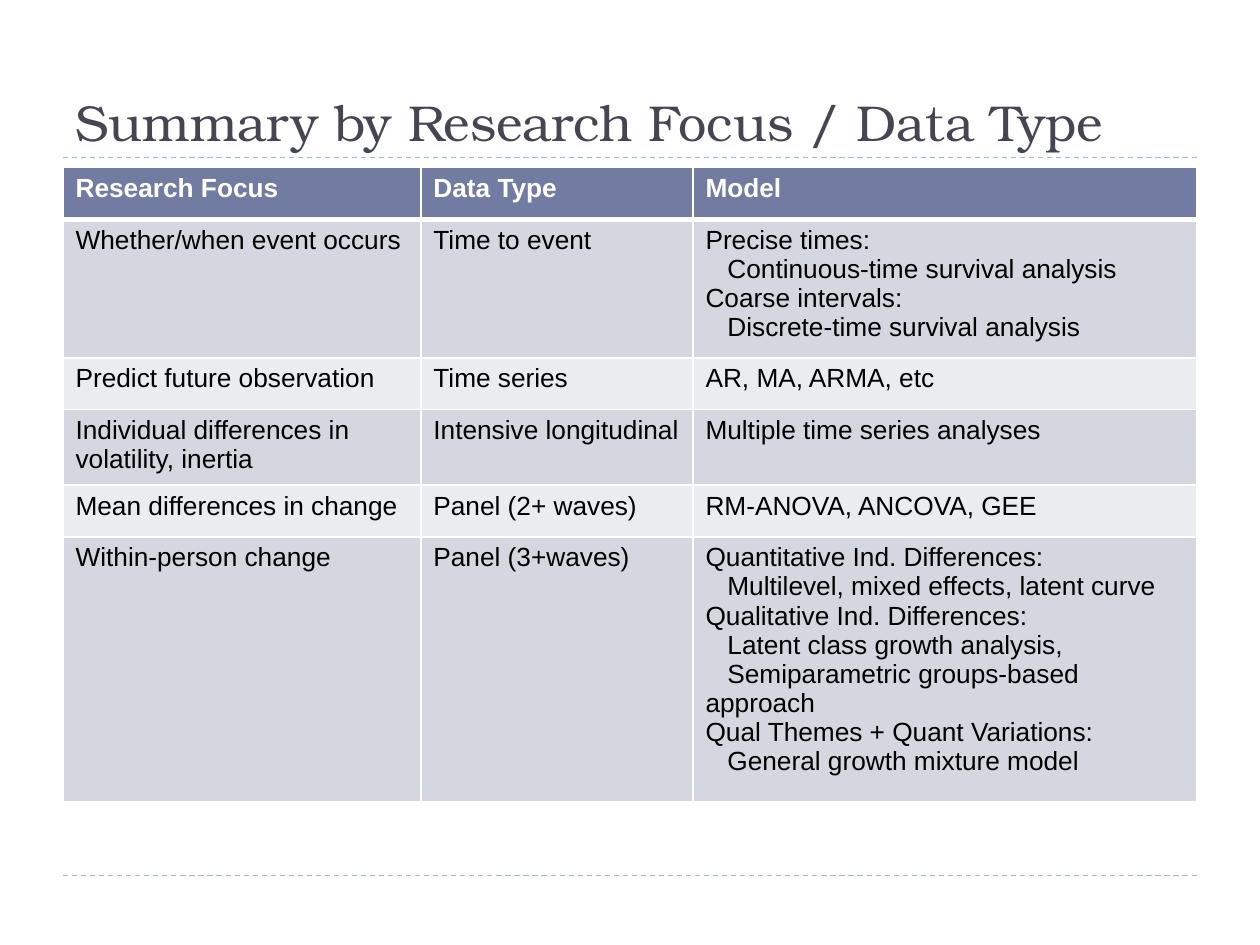
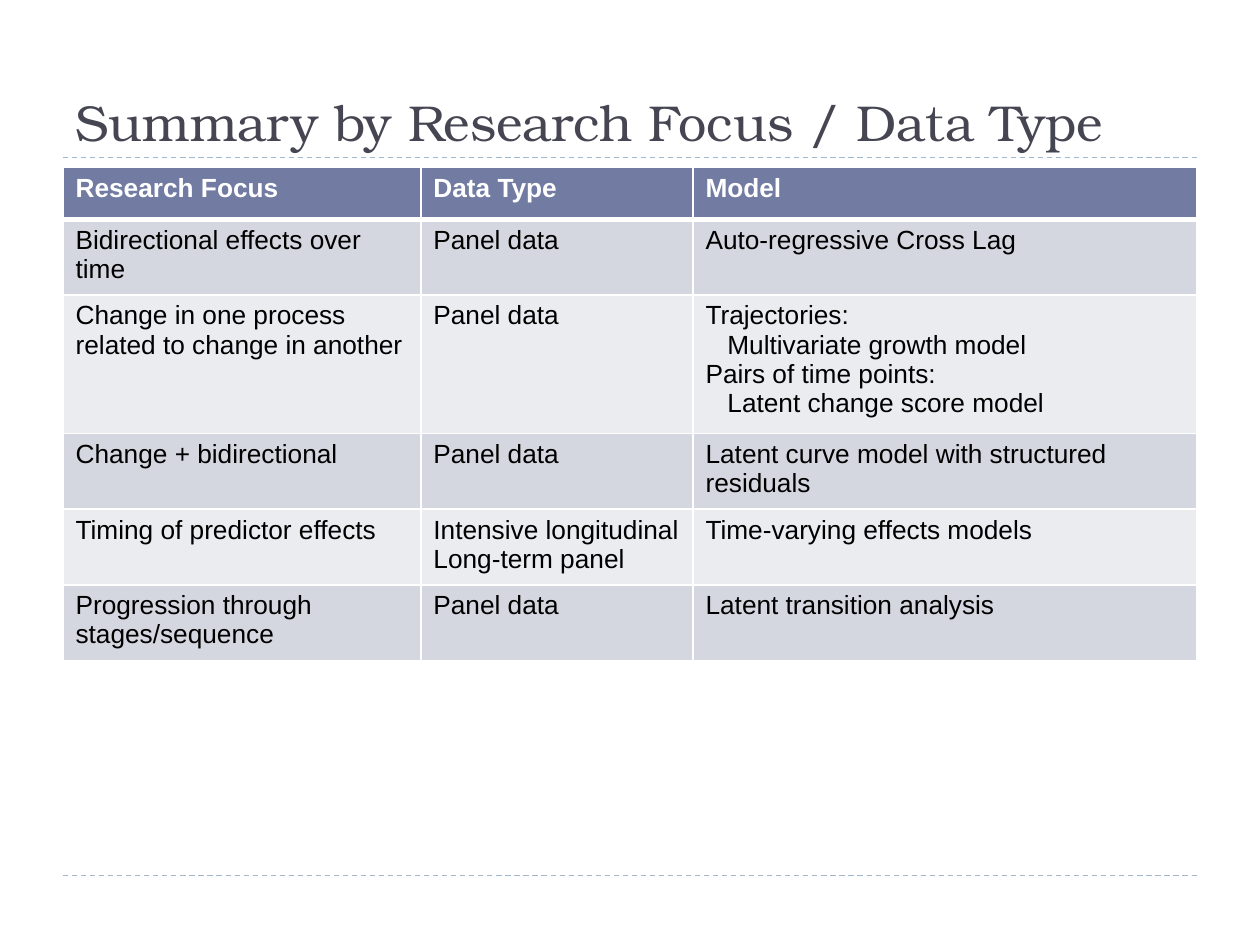
from lxml.etree import SubElement
from pptx import Presentation
from pptx.dml.color import RGBColor
from pptx.enum.dml import MSO_LINE_DASH_STYLE as Dash
from pptx.enum.shapes import MSO_CONNECTOR as Connector
from pptx.enum.text import MSO_ANCHOR as Anchor
from pptx.oxml.ns import qn
from pptx.util import Inches, Pt

TITLE = "Summary by Research Focus / Data Type"
HEADER = ("Research Focus", "Data Type", "Model")
INDENT_MARK = "> "

TABLES = [
    [
        ("Whether/when event occurs", "Time to event",
         "Precise times:\n> Continuous-time survival analysis\n"
         "Coarse intervals:\n> Discrete-time survival analysis"),
        ("Predict future observation", "Time series", "AR, MA, ARMA, etc"),
        ("Individual differences in volatility, inertia",
         "Intensive longitudinal", "Multiple time series analyses"),
        ("Mean differences in change", "Panel (2+ waves)", "RM-ANOVA, ANCOVA, GEE"),
        ("Within-person change", "Panel (3+waves)",
         "Quantitative Ind. Differences:\n> Multilevel, mixed effects, latent curve\n"
         "Qualitative Ind. Differences:\n> Latent class growth analysis,\n"
         "> Semiparametric groups-based approach\n"
         "Qual Themes + Quant Variations:\n> General growth mixture model"),
    ],
    [
        ("Bidirectional effects over time", "Panel data", "Auto-regressive Cross Lag"),
        ("Change in one process related to change in another", "Panel data",
         "Trajectories:\n> Multivariate growth model\n"
         "Pairs of time points:\n> Latent change score model"),
        ("Change + bidirectional", "Panel data",
         "Latent curve model with structured residuals"),
        ("Timing of predictor effects", "Intensive longitudinal\nLong-term panel",
         "Time-varying effects models"),
        ("Progression through stages/sequence", "Panel data",
         "Latent transition analysis"),
    ],
]

WHITE = RGBColor(0xFF, 0xFF, 0xFF)
BLACK = RGBColor(0x00, 0x00, 0x00)
TITLE_COLOR = RGBColor(0x46, 0x46, 0x53)
RULE_COLOR = RGBColor(0x9F, 0xB8, 0xCD)
HEADER_FILL = RGBColor(0x72, 0x7C, 0xA3)
BAND_FILLS = (RGBColor(0xEB, 0xEC, 0xF0), RGBColor(0xD5, 0xD7, 0xE0))

TITLE_FONT, TITLE_SIZE = "TeX Gyre Bonum", Pt(28.8)
BODY_FONT, BODY_SIZE = "Arial", Pt(15)
FIRST_LINE_INDENT = Pt(12.5)

SLIDE_WIDTH, SLIDE_HEIGHT = Inches(10), Inches(7.5)
MARGIN = Inches(0.5)
CONTENT_WIDTH = SLIDE_WIDTH - 2 * MARGIN
TITLE_TOP, TITLE_RULE, FOOTER_RULE = Inches(0.17), Inches(1.25), Inches(6.95)
TABLE_TOP, ROW_HEIGHT = Inches(1.33), Inches(0.41)
COLUMN_WIDTHS = [Inches(width) for width in (2.84, 2.16, 4)]


def style_font(paragraph, name, size, color, bold=False):
    for run in paragraph.runs:
        font = run.font
        font.name, font.size, font.bold = name, size, bold
        font.color.rgb = color


def add_rule(slide, y):
    rule = slide.shapes.add_connector(
        Connector.STRAIGHT, MARGIN, y, SLIDE_WIDTH - MARGIN, y)
    rule.line.color.rgb = RULE_COLOR
    rule.line.width = Pt(0.75)
    rule.line.dash_style = Dash.DASH
    SubElement(rule._element.spPr, qn("a:effectLst"))


def add_title(slide):
    box = slide.shapes.add_textbox(
        MARGIN, TITLE_TOP, CONTENT_WIDTH, TITLE_RULE - TITLE_TOP)
    frame = box.text_frame
    frame.word_wrap = True
    frame.vertical_anchor = Anchor.BOTTOM
    frame.text = TITLE
    style_font(frame.paragraphs[0], TITLE_FONT, TITLE_SIZE, TITLE_COLOR)


def set_borders(cell, top, bottom):
    properties = cell._tc.get_or_add_tcPr()
    for side, points in (("L", 1), ("R", 1), ("T", top), ("B", bottom)):
        border = SubElement(properties, qn(f"a:ln{side}"), w=str(Pt(points)))
        fill = SubElement(border, qn("a:solidFill"))
        SubElement(fill, qn("a:srgbClr"), val=str(WHITE))


def fill_cell(cell, text, row_index):
    is_header = row_index == 0
    set_borders(cell, top=3 if row_index == 1 else 1, bottom=3 if is_header else 1)
    cell.fill.solid()
    cell.fill.fore_color.rgb = HEADER_FILL if is_header else BAND_FILLS[row_index % 2]
    lines = text.split("\n")
    cell.text_frame.text = "\n".join(line.removeprefix(INDENT_MARK) for line in lines)
    for paragraph, line in zip(cell.text_frame.paragraphs, lines):
        style_font(paragraph, BODY_FONT, BODY_SIZE,
                   WHITE if is_header else BLACK, is_header)
        if line.startswith(INDENT_MARK):
            paragraph._p.get_or_add_pPr().set("indent", str(FIRST_LINE_INDENT))


def add_summary_table(slide, body):
    rows = [HEADER, *body]
    table = slide.shapes.add_table(
        len(rows), len(HEADER), MARGIN, TABLE_TOP,
        CONTENT_WIDTH, ROW_HEIGHT * len(rows)).table
    for column, width in zip(table.columns, COLUMN_WIDTHS):
        column.width = width
    for row_index, row in enumerate(rows):
        for column_index, text in enumerate(row):
            fill_cell(table.cell(row_index, column_index), text, row_index)


def main():
    presentation = Presentation()
    presentation.slide_width, presentation.slide_height = SLIDE_WIDTH, SLIDE_HEIGHT
    for body in TABLES:
        slide = presentation.slides.add_slide(presentation.slide_layouts[6])
        for y in (FOOTER_RULE, TITLE_RULE):
            add_rule(slide, y)
        add_title(slide)
        add_summary_table(slide, body)
    presentation.save("out.pptx")


if __name__ == "__main__":
    main()
